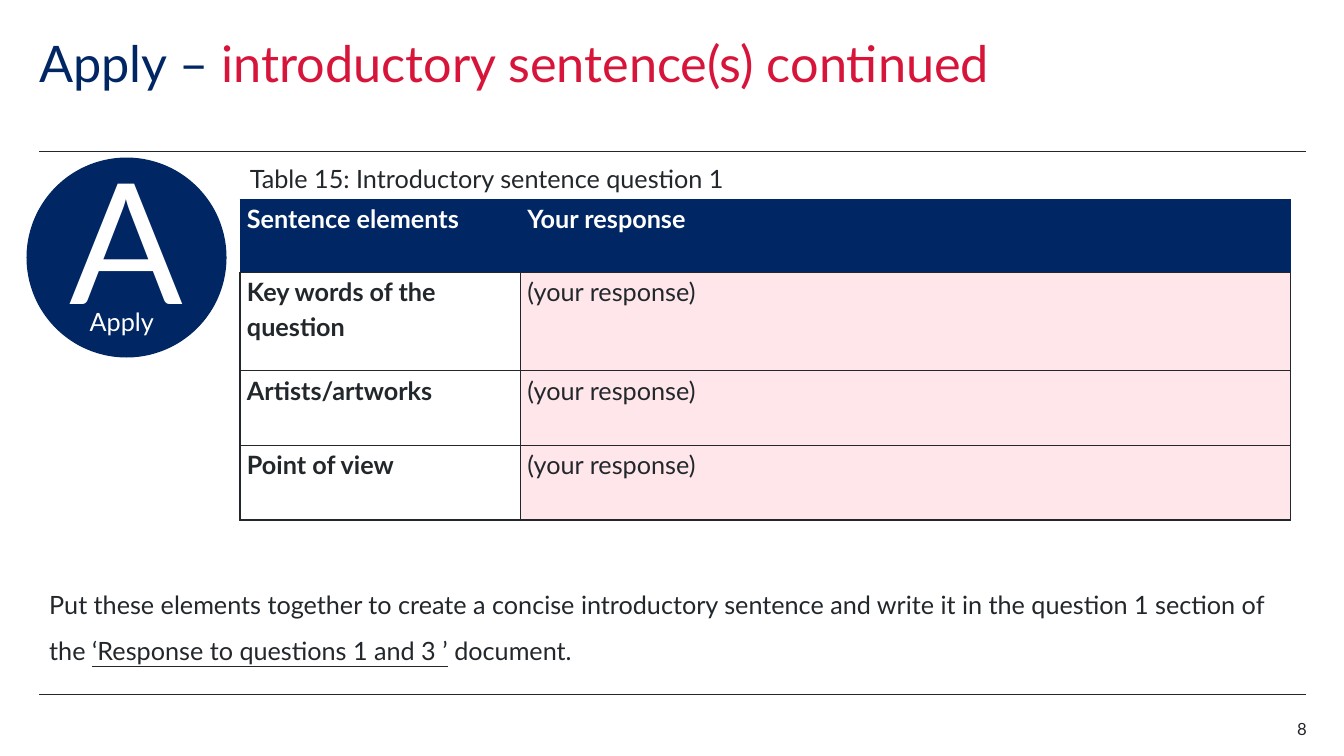
from dataclasses import dataclass

from lxml import etree
from pptx import Presentation
from pptx import util as u
from pptx.dml.color import RGBColor
from pptx.enum import shapes, text
from pptx.oxml import ns


@dataclass(frozen=True)
class Theme:
    font: str = "Lato"
    navy: str = "002664"
    red: str = "D7153A"
    ink: str = "22272B"
    blush: str = "FFE6EA"
    white: str = "FFFFFF"
    title: int = 36
    letter: int = 120
    body: int = 18
    footer: int = 12


THEME = Theme()


@dataclass(frozen=True)
class Span:
    words: str
    color: str = THEME.ink
    size: int = THEME.body
    bold: bool = False
    underline: bool = False


@dataclass(frozen=True)
class TextBlock:
    left: float
    top: float
    width: float
    height: float
    spans: tuple[Span, ...]
    line_spacing: float = 1.0
    align: text.PP_ALIGN = text.PP_ALIGN.LEFT
    inset: tuple[float, float] = (0, 0)


@dataclass(frozen=True)
class TableRow:
    height: float
    element: str
    response: str = "(your response)"


BADGE_LABEL = TextBlock(0.89, 3.04, 0.73, 0.48, (Span("Apply", THEME.white),))
BLOCKS = (
    TextBlock(0.39, 0.39, 11.02, 1.1, (
        Span("Apply – ", THEME.navy, THEME.title),
        Span("introductory sentence(s) continued", THEME.red, THEME.title),
    ), line_spacing=0.9),
    TextBlock(2.38, 1.57, 8.14, 0.4, (
        Span("Table 15: Introductory sentence question 1"),
    ), inset=(0.1, 0.05)),
    TextBlock(0.39, 5.65, 12.56, 0.95, (
        Span("Put these elements together to create a concise introductory "
             "sentence and write it in the question 1 section of the "),
        Span("‘Response to questions 1 and 3 ’", underline=True),
        Span(" document."),
    ), line_spacing=1.5, inset=(0.1, 0.05)),
    TextBlock(12.17, 7.13, 0.79, 0.2, (Span("8", size=THEME.footer),),
              align=text.PP_ALIGN.RIGHT),
)
COLUMN_WIDTHS = (2.78, 7.64)
ROWS = (
    TableRow(0.72, "Sentence elements", "Your response"),
    TableRow(0.98, "Key words of the question"),
    TableRow(0.74, "Artists/artworks"),
    TableRow(0.74, "Point of view"),
)
RULE_TOPS = (1.5, 6.89)


def rgb(color: str) -> RGBColor:
    return RGBColor.from_string(color)


def add_span(para, span: Span) -> None:
    run = para.add_run()
    run.text = span.words
    font = run.font
    font.name = THEME.font
    font.size = u.Pt(span.size)
    font.bold = span.bold
    font.underline = span.underline
    font.color.rgb = rgb(span.color)


def add_text(container, block: TextBlock) -> None:
    box = container.add_textbox(u.Inches(block.left), u.Inches(block.top),
                                u.Inches(block.width), u.Inches(block.height))
    frame = box.text_frame
    frame.word_wrap = True
    frame.margin_left = frame.margin_right = u.Inches(block.inset[0])
    frame.margin_top = frame.margin_bottom = u.Inches(block.inset[1])
    para = frame.paragraphs[0]
    para.alignment = block.align
    para.line_spacing = block.line_spacing
    for span in block.spans:
        add_span(para, span)


def add_rule(page, top: float) -> None:
    rule = page.shapes.add_connector(
        shapes.MSO_CONNECTOR.STRAIGHT,
        u.Inches(0.39), u.Inches(top), u.Inches(12.95), u.Inches(top))
    rule.line.color.rgb = rgb(THEME.ink)
    rule.line.width = u.Pt(0.5)
    etree.SubElement(rule._element.spPr, ns.qn("a:effectLst"))


def add_badge(page) -> None:
    badge = page.shapes.add_group_shape()
    circle = badge.shapes.add_shape(
        shapes.MSO_SHAPE.OVAL, u.Inches(0.27), u.Inches(1.57),
        u.Inches(1.97), u.Inches(1.97))
    circle.shadow.inherit = False
    circle.fill.solid()
    circle.fill.fore_color.rgb = rgb(THEME.navy)
    circle.line.color.rgb = rgb(THEME.navy)
    circle.line.width = u.Pt(1)
    frame = circle.text_frame
    frame.margin_left = frame.margin_right = frame.margin_top = 0
    frame.margin_bottom = u.Inches(0.4)
    frame.vertical_anchor = text.MSO_ANCHOR.MIDDLE
    para = frame.paragraphs[0]
    para.alignment = text.PP_ALIGN.CENTER
    add_span(para, Span("A", THEME.white, THEME.letter))
    add_text(badge.shapes, BADGE_LABEL)


def set_borders(cell, header: bool) -> None:
    """Outline a cell; header sides and top are navy, all else is ink."""
    properties = cell._tc.get_or_add_tcPr()
    for index, side in enumerate("LRTB"):
        navy = header and side != "B"
        border = etree.Element(ns.qn(f"a:ln{side}"),
                               w=str(u.Pt(0.5 if navy else 1)))
        fill = etree.SubElement(border, ns.qn("a:solidFill"))
        etree.SubElement(fill, ns.qn("a:srgbClr"),
                         val=THEME.navy if navy else THEME.ink)
        properties.insert(index, border)


def fill_cell(cell, words: str, header: bool, label: bool) -> None:
    cell.margin_left = cell.margin_right = u.Inches(0.07)
    cell.margin_top = cell.margin_bottom = 0
    cell.fill.solid()
    body_fill = THEME.white if label else THEME.blush
    cell.fill.fore_color.rgb = rgb(THEME.navy if header else body_fill)
    set_borders(cell, header)
    para = cell.text_frame.paragraphs[0]
    para.line_spacing = 1.15
    add_span(para, Span(words, THEME.white if header else THEME.ink,
                        bold=header or label))


def add_response_table(page) -> None:
    table = page.shapes.add_table(
        len(ROWS), len(COLUMN_WIDTHS), u.Inches(2.38), u.Inches(1.98),
        u.Inches(sum(COLUMN_WIDTHS)),
        u.Inches(sum(row.height for row in ROWS))).table
    table.horz_banding = False
    for column, width in zip(table.columns, COLUMN_WIDTHS):
        column.width = u.Inches(width)
    for index, row in enumerate(ROWS):
        table.rows[index].height = u.Inches(row.height)
        header = index == 0
        fill_cell(table.cell(index, 0), row.element, header, label=True)
        fill_cell(table.cell(index, 1), row.response, header, label=False)


def main() -> None:
    deck = Presentation()
    deck.slide_width, deck.slide_height = u.Inches(13.33), u.Inches(7.5)
    page = deck.slides.add_slide(deck.slide_layouts[6])
    for top in RULE_TOPS:
        add_rule(page, top)
    add_badge(page)
    add_response_table(page)
    for block in BLOCKS:
        add_text(page.shapes, block)
    deck.save("out.pptx")


if __name__ == "__main__":
    main()
